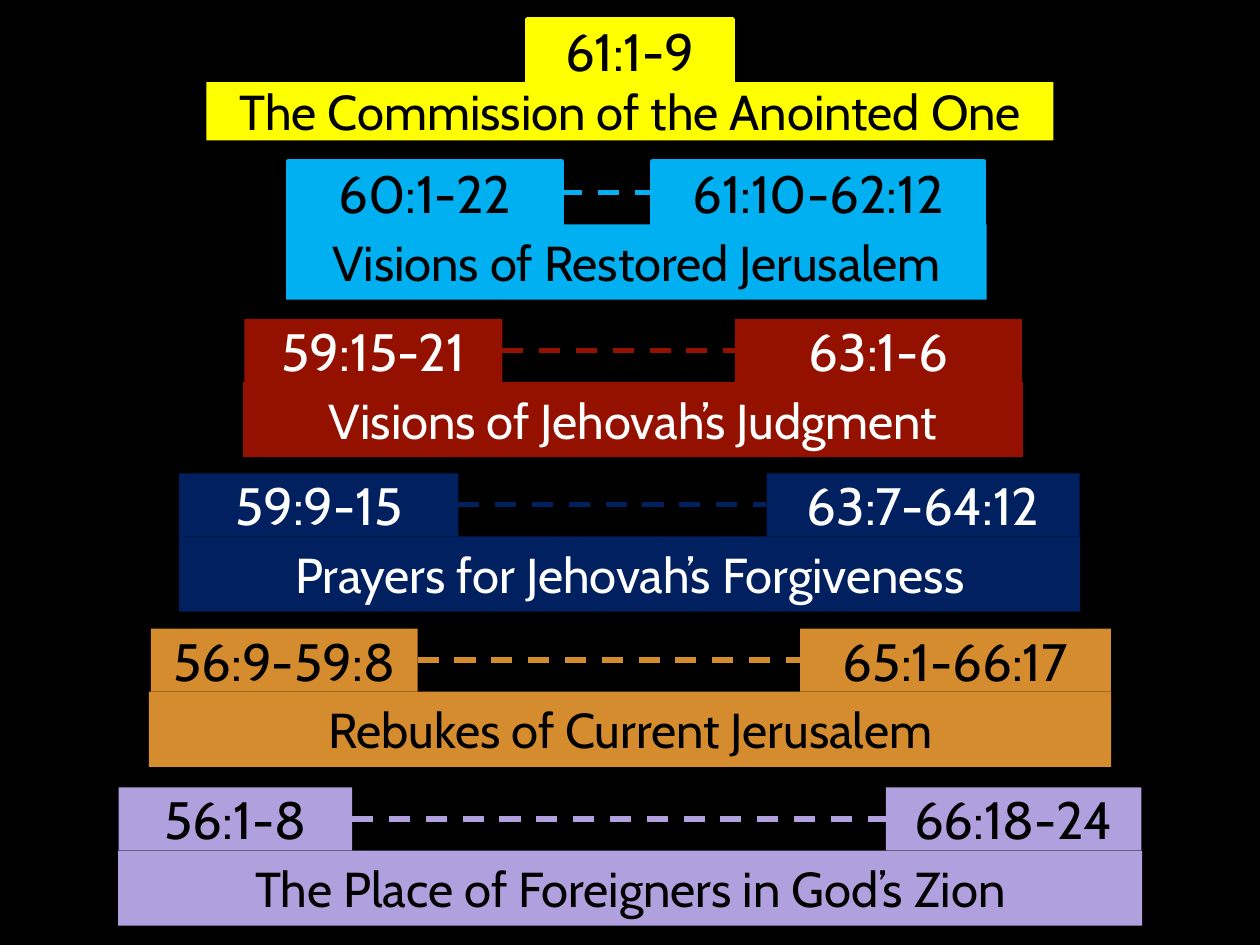
from pptx import Presentation
from pptx.dml.color import RGBColor
from pptx.enum.dml import MSO_LINE
from pptx.enum.shapes import MSO_CONNECTOR, MSO_SHAPE
from pptx.enum.text import MSO_ANCHOR, PP_ALIGN
from pptx.oxml.ns import qn
from pptx.util import Pt

RECT = MSO_SHAPE.RECTANGLE
STRAIGHT = MSO_CONNECTOR.STRAIGHT
DASH = MSO_LINE.DASH
MIDDLE = MSO_ANCHOR.MIDDLE
CENTER = PP_ALIGN.CENTER
LEFT_SIDE, RIGHT_SIDE = 1, 3

BLACK = RGBColor(0x00, 0x00, 0x00)
WHITE = RGBColor(0xFF, 0xFF, 0xFF)
YELLOW = RGBColor(0xFF, 0xFF, 0x00)
SKY = RGBColor(0x00, 0xB0, 0xF0)
RED = RGBColor(0x94, 0x11, 0x00)
NAVY = RGBColor(0x00, 0x20, 0x60)
OCHRE = RGBColor(0xD5, 0x8C, 0x2E)
LILAC = RGBColor(0xB0, 0xA0, 0xDD)

TAB_HEIGHT = 36

# fill, font colour, outlined tabs, top,
# tabs (left, width, verses), bar (left, width, height, theme)
LEVELS = [
    (YELLOW, BLACK, True, 11, [(301.7, 116.6, "61:1-9")],
     (118, 484, 33.2, "The Commission of the Anointed One")),
    (SKY, BLACK, True, 92.2,
     [(164.7, 156, "60:1-22"), (373, 189.2, "61:10-62:12")],
     (163.5, 400.3, 43, "Visions of Restored Jerusalem")),
    (RED, WHITE, False, 182.2,
     [(139.6, 147.5, "59:15-21"), (420, 164, "63:1-6")],
     (139, 445.5, 43, "Visions of Jehovah’s Judgment")),
    (NAVY, WHITE, False, 270.5,
     [(102.4, 159.6, "59:9-15"), (438, 179, "63:7-64:12")],
     (102.4, 514.8, 43, "Prayers for Jehovah’s Forgiveness")),
    (OCHRE, BLACK, False, 359.2,
     [(86.2, 152.5, "56:9-59:8"), (457.2, 177.6, "65:1-66:17")],
     (85, 550, 43, "Rebukes of Current Jerusalem")),
    (LILAC, BLACK, False, 450,
     [(67.8, 133.5, "56:1-8"), (506.2, 146, "66:18-24")],
     (67.5, 585.2, 43, "The Place of Foreigners in God’s Zion")),
]


class Deck:
    font = "Cabin"
    line_width = Pt(3)

    def __init__(self, slide):
        self.s = slide

    def background(self, color):
        fill = self.s.background.fill
        fill.solid()
        fill.fore_color.rgb = color

    def box(self, x, y, w, h, text, size, fill, color, outlined=False):
        sp = self.s.shapes.add_shape(RECT, Pt(x), Pt(y), Pt(w), Pt(h))
        sp.shadow.inherit = False
        sp.fill.solid()
        sp.fill.fore_color.rgb = fill
        if outlined:
            sp.line.color.rgb = fill
            sp.line.width = self.line_width
        else:
            sp.line.fill.background()
        tf = sp.text_frame
        tf.text = text
        tf.vertical_anchor = MIDDLE
        p = tf.paragraphs[0]
        p.alignment = CENTER
        font = p.runs[0].font
        font.name, font.size = self.font, Pt(size)
        font.color.rgb = color
        return sp

    def dashes(self, left, right, color):
        line = self.s.shapes.add_connector(STRAIGHT, 0, 0, 0, 0)
        line.begin_connect(left, RIGHT_SIDE)
        line.end_connect(right, LEFT_SIDE)
        line.line.color.rgb = color
        line.line.width = self.line_width
        line.line.dash_style = DASH
        sp_pr = line._element.spPr
        sp_pr.append(sp_pr.makeelement(qn("a:effectLst"), {}))


def main():
    prs = Presentation()
    prs.slide_width, prs.slide_height = Pt(720), Pt(540)
    deck = Deck(prs.slides.add_slide(prs.slide_layouts[6]))
    deck.background(BLACK)

    for fill, color, outlined, top, tabs, bar in LEVELS:
        # Verse tabs
        boxes = [deck.box(x, top, w, TAB_HEIGHT, verses, 30, fill, color, outlined)
                 for x, w, verses in tabs]
        # Theme bar below the tabs
        x, w, h, theme = bar
        deck.box(x, top + TAB_HEIGHT, w, h, theme, 28, fill, color)
        # Dashed link between paired tabs
        if len(boxes) == 2:
            deck.dashes(*boxes, fill)

    prs.save("out.pptx")


if __name__ == "__main__":
    main()
